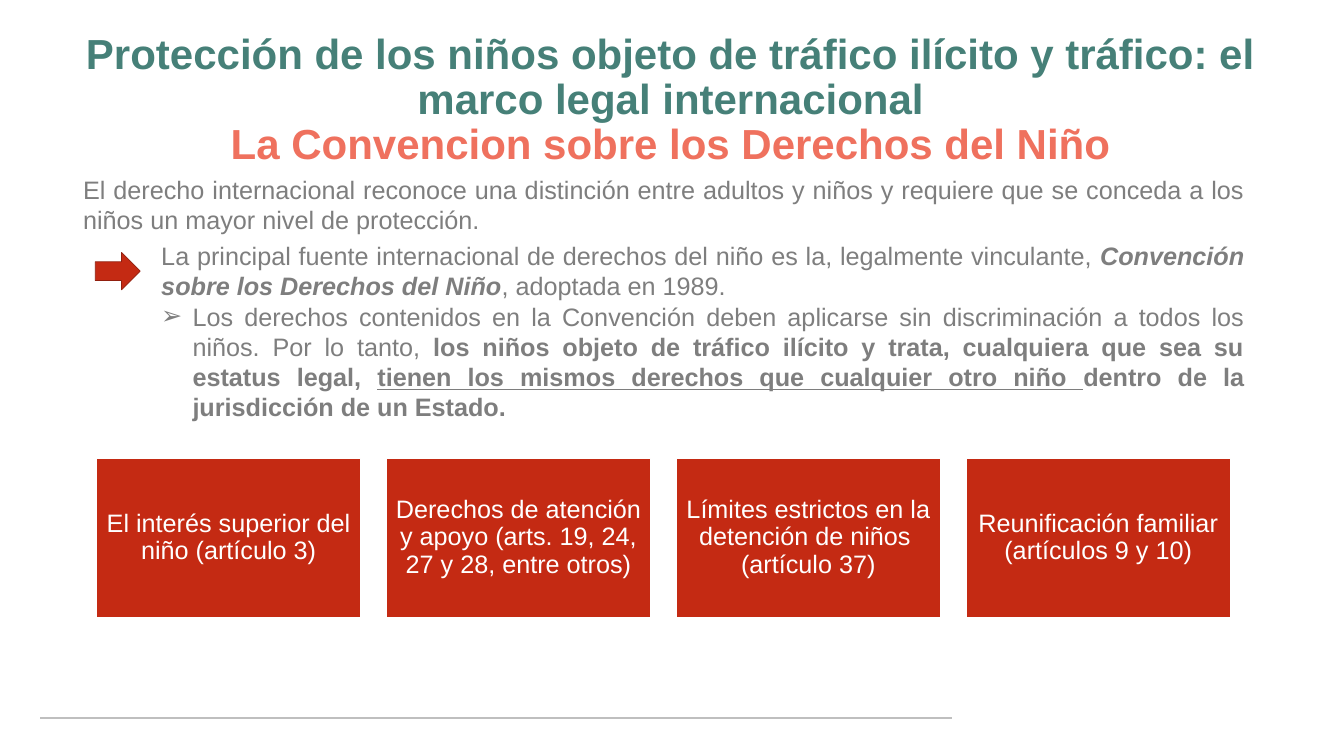
from lxml.etree import SubElement
from pptx import Presentation
from pptx.dml.color import RGBColor
from pptx.enum.shapes import MSO_CONNECTOR, MSO_SHAPE
from pptx.enum.text import MSO_ANCHOR, MSO_AUTO_SIZE, PP_ALIGN
from pptx.oxml.ns import qn
from pptx.util import Inches, Pt

GREEN, CORAL, GREY, RED = "468078", "EF715E", "7E7E7E", "C42A13"
DARK_RED, WHITE, RULE_GREY = "911F0E", "FFFFFF", "BFBFBF"


def color(value):
    return RGBColor.from_string(value)


def style(run, size, value, bold=False, italic=False, underline=False):
    run.font.name = "Arial"
    run.font.size = Pt(size)
    run.font.color.rgb = color(value)
    run.font.bold = bold
    run.font.italic = italic
    run.font.underline = underline


deck = Presentation()
deck.slide_width, deck.slide_height = Inches(26.66), Inches(15)
slide = deck.slides.add_slide(deck.slide_layouts[5])
shapes = slide.shapes

footer_rule = shapes.add_connector(
    MSO_CONNECTOR.STRAIGHT, Inches(0.8), Inches(14.25), Inches(18.88), Inches(14.25))
footer_rule.line.color.rgb = color(RULE_GREY)
footer_rule.line.width = Pt(2.25)
SubElement(footer_rule._element.spPr, qn("a:effectLst"))

title = shapes.title
title.left, title.top = Inches(0.8), Inches(0.55)
title.width, title.height = Inches(25.01), Inches(2.9)
heading = title.text_frame
heading.text = ("Protección de los niños objeto de tráfico ilícito y tráfico: "
                "el marco legal internacional\vLa Convencion sobre los Derechos del Niño")
heading.word_wrap = True
heading.auto_size = MSO_AUTO_SIZE.NONE
heading.vertical_anchor = MSO_ANCHOR.MIDDLE
heading.margin_left = heading.margin_right = Inches(0.2)
heading.margin_top = heading.margin_bottom = Inches(0.1)
heading.paragraphs[0].alignment = PP_ALIGN.CENTER
heading.paragraphs[0].line_spacing = 0.9
for run, value in zip(heading.paragraphs[0].runs, (GREEN, CORAL)):
    style(run, 60, value, bold=True)

introduction = [[
    ("El derecho internacional reconoce una distinción entre adultos y niños y requiere "
     "que se conceda a los niños un mayor nivel de protección.", {})]]
convention = [
    [("La principal fuente internacional de derechos del niño es la, legalmente vinculante, ", {}),
     ("Convención sobre los Derechos del Niño", {"bold": True, "italic": True}),
     (", adoptada en 1989.", {})],
    [("Los derechos contenidos en la Convención deben aplicarse sin discriminación a todos "
      "los niños. Por lo tanto, ", {}),
     ("los niños objeto de tráfico ilícito y trata, cualquiera que sea su estatus legal, ",
      {"bold": True}),
     ("tienen los mismos derechos que cualquier otro niño ", {"bold": True, "underline": True}),
     ("dentro de la jurisdicción de un Estado.", {"bold": True})],
]
passages = [(1.55, 3.41, 23.23, 1.31, introduction), (3.1, 4.72, 21.68, 3.13, convention)]
for left, top, width, height, paragraphs in passages:
    passage = shapes.add_textbox(
        Inches(left), Inches(top), Inches(width), Inches(height)).text_frame
    passage.word_wrap = True
    passage.auto_size = MSO_AUTO_SIZE.SHAPE_TO_FIT_TEXT
    for index, pieces in enumerate(paragraphs):
        paragraph = passage.add_paragraph() if index else passage.paragraphs[0]
        paragraph.alignment = PP_ALIGN.JUSTIFY
        if index:
            properties = paragraph._p.get_or_add_pPr()
            properties.set("marL", str(Inches(0.62)))
            properties.set("indent", str(-Inches(0.62)))
            SubElement(properties, qn("a:buFont"), typeface="Arial")
            SubElement(properties, qn("a:buChar"), char="➢")
        for words, emphasis in pieces:
            run = paragraph.add_run()
            run.text = words
            style(run, 36, GREY, **emphasis)

arrow = shapes.add_shape(
    MSO_SHAPE.RIGHT_ARROW, Inches(1.89), Inches(5.01), Inches(0.89), Inches(0.74))
arrow.shadow.inherit = False
arrow.fill.solid()
arrow.fill.fore_color.rgb = color(RED)
arrow.line.color.rgb = color(DARK_RED)
arrow.line.width = Pt(1)

rights = [
    "El interés superior del niño (artículo 3)",
    "Derechos de atención y apoyo (arts. 19, 24, 27 y 28, entre otros)",
    "Límites estrictos en la detención de niños  (artículo 37)",
    "Reunificación familiar (artículos 9 y 10)",
]
for index, right in enumerate(rights):
    card = shapes.add_shape(
        MSO_SHAPE.RECTANGLE, Inches(1.92 + index * 5.75), Inches(9.1), Inches(5.23), Inches(3.14))
    card.shadow.inherit = False
    card.fill.solid()
    card.fill.fore_color.rgb = color(RED)
    card.line.color.rgb = color(WHITE)
    card.line.width = Pt(1)
    label = card.text_frame
    label.text = right
    label.word_wrap = True
    label.vertical_anchor = MSO_ANCHOR.MIDDLE
    label.margin_left = label.margin_right = Inches(0.15)
    label.margin_top = label.margin_bottom = Inches(0.15)
    label.paragraphs[0].alignment = PP_ALIGN.CENTER
    label.paragraphs[0].line_spacing = 0.9
    style(label.paragraphs[0].runs[0], 36, WHITE)

deck.save("out.pptx")
